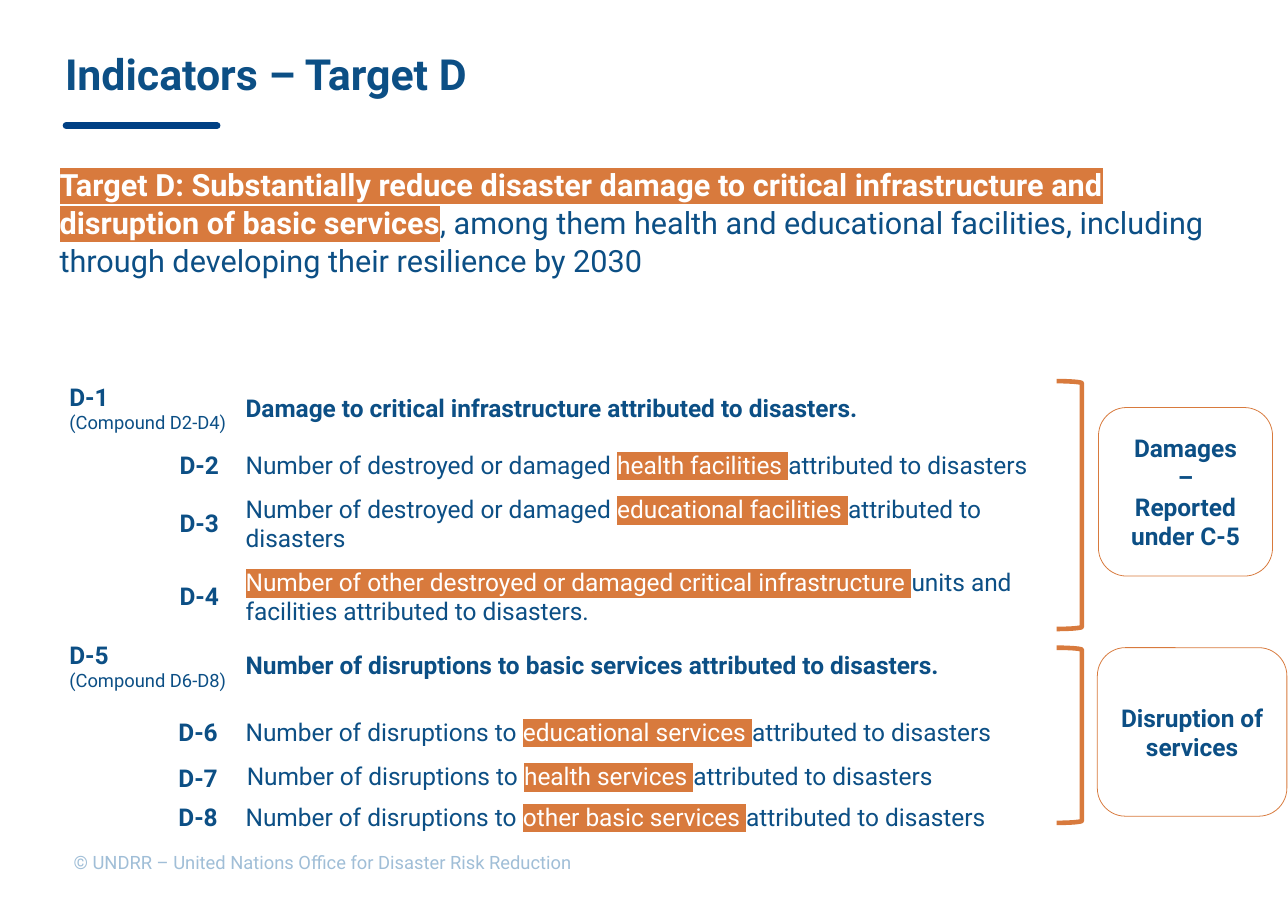
import pptx
import pptx.util
import pptx.dml.color
import pptx.enum.shapes
import pptx.enum.text
import pptx.oxml.ns
import lxml.etree

Inches = pptx.util.Inches
Pt = pptx.util.Pt
SHAPE = pptx.enum.shapes.MSO_SHAPE
ALIGN = pptx.enum.text.PP_ALIGN
MIDDLE = pptx.enum.text.MSO_ANCHOR.MIDDLE
TOP = pptx.enum.text.MSO_ANCHOR.TOP
qn = pptx.oxml.ns.qn

HUES = {"blue": "0C4F85", "rule": "004084", "mark": "D87A3D",
        "pale": "A0BED7", "white": "FFFFFF"}

ROWS = [
    (0.78, "D-1", "(Compound D2-D4)", 0,
     "Damage to critical infrastructure attributed to disasters."),
    (0.24, "D-2", "", 1,
     "Number of destroyed or damaged |health facilities |attributed to disasters"),
    (0.79, "D-3", "", 1,
     "Number of destroyed or damaged |educational facilities |attributed to disasters"),
    (0.35, "D-4", "", 1,
     "|Number of other destroyed or damaged critical infrastructure |"
     "units and facilities attributed to disasters."),
    (0.72, "D-5", "(Compound D6-D8)", 0,
     "Number of disruptions to basic services attributed to disasters."),
    (0.49, "D-6", "", 0.99,
     "Number of disruptions to |educational services |attributed to disasters"),
    (0.35, "D-7", "", 0.99,
     "Number of disruptions to |health services |attributed to disasters"),
    (0.35, "D-8", "", 0.99,
     "Number of disruptions to |other basic services |attributed to disasters"),
]


class Deck:
    """Holds the style and the current slide, and draws each kind of element."""

    def __init__(self, wide, high):
        self.file = pptx.Presentation()
        self.file.slide_width = Inches(wide)
        self.file.slide_height = Inches(high)
        self.slide = self.file.slides.add_slide(self.file.slide_layouts[5])
        self.shapes = self.slide.shapes

    def hue(self, name):
        return pptx.dml.color.RGBColor.from_string(HUES[name])

    def put(self, thing, **values):
        for name, value in values.items():
            setattr(thing, name, value)

    def run(self, para, text, size, color="blue", bold=False, mark=False):
        run = para.add_run()
        run.text = text
        self.put(run.font, name="Roboto", size=Pt(size), bold=bold)
        run.font.color.rgb = self.hue("white" if mark else color)
        if mark:
            glow = lxml.etree.Element(qn("a:highlight"))
            lxml.etree.SubElement(glow, qn("a:srgbClr"), val=HUES["mark"])
            run.font._element.find(qn("a:solidFill")).addnext(glow)

    def frame(self, frame, pads, anchor):
        names = ("margin_left", "margin_top", "margin_right", "margin_bottom")
        self.put(frame, word_wrap=True, vertical_anchor=anchor,
                 **{name: Inches(pad) for name, pad in zip(names, pads)})
        return frame.paragraphs[0]

    def title(self, text, *box):
        shape = self.shapes.title
        names = ("left", "top", "width", "height")
        self.put(shape, **{name: Inches(size) for name, size in zip(names, box)})
        para = self.frame(shape.text_frame, (0, 0.06, 0.11, 0.06), MIDDLE)
        para.alignment = ALIGN.LEFT
        self.run(para, text, 28, bold=True)

    def text(self, box, pads=(0.1, 0.05, 0.1, 0.05)):
        shape = self.shapes.add_textbox(*map(Inches, box))
        return self.frame(shape.text_frame, pads, TOP)

    def rule(self, left, right, top):
        kind = pptx.enum.shapes.MSO_CONNECTOR.STRAIGHT
        line = self.shapes.add_connector(
            kind, Inches(left), Inches(top), Inches(right), Inches(top))
        line.line.color.rgb = self.hue("rule")
        line.line.width = Pt(4.5)
        line.line._ln.set("cap", "rnd")
        lxml.etree.SubElement(line._element.spPr, qn("a:effectLst"))

    def shape(self, kind, box, width):
        shape = self.shapes.add_shape(kind, *map(Inches, box))
        shape.shadow.inherit = False
        shape.fill.background()
        shape.line.color.rgb = self.hue("mark")
        shape.line.width = Pt(width)
        return shape

    def label(self, lines, box):
        frame = self.shape(SHAPE.ROUNDED_RECTANGLE, box, 0.5).text_frame
        para = self.frame(frame, (0.1, 0.05, 0.1, 0.05), MIDDLE)
        for spot, line in enumerate(lines):
            para = frame.add_paragraph() if spot else para
            para.alignment = ALIGN.CENTER
            self.run(para, line, 16, bold=True)

    def cell(self, cell, indent=0):
        cell.fill.background()
        self.put(cell, vertical_anchor=MIDDLE, margin_left=Inches(0.07 + indent),
                 margin_right=Inches(0.07), margin_top=0, margin_bottom=0)
        return cell.text_frame.paragraphs[0]

    def table(self, rows, box, widths):
        table = self.shapes.add_table(
            len(rows), len(widths), *map(Inches, box)).table
        self.put(table, first_row=False, horz_banding=False)
        for column, width in zip(table.columns, widths):
            column.width = Inches(width)
        for row, (high, code, note, indent, text) in zip(table.rows, rows):
            row.height = Inches(high)
            left, right = row.cells
            self.run(self.cell(left, indent), code, 16, bold=True)
            if note:
                self.run(left.text_frame.add_paragraph(), note, 12)
            para = self.cell(right)
            for spot, part in enumerate(text.split("|")):
                if part:
                    self.run(para, part, 16, bold=bool(note), mark=spot == 1)
        return table


def main():
    deck = Deck(11.69, 8.27)
    deck.rule(0.6, 1.97, 1.14)
    foot = deck.text((0.57, 7.68, 10.3, 0.3))
    deck.run(foot, "© UNDRR – United Nations Office for Disaster Risk Reduction",
             12, "pale")
    deck.title("Indicators – Target D", 0.59, 0.2, 10.52, 0.94)

    goal = deck.text((0.54, 1.44, 10.62, 1.21), (0, 0.06, 0.11, 0.06))
    goal.line_spacing = 1.03
    deck.run(goal, "Target D: Substantially reduce disaster damage to critical "
             "infrastructure and disruption of basic services",
             20, bold=True, mark=True)
    deck.run(goal, ", among them health and educational facilities, including "
             "through developing their resilience by 2030", 20)

    table = deck.table(ROWS, (0.56, 3.32, 9.26, 4.07), (1.6, 7.66))
    deck.put(table.cell(6, 1), vertical_anchor=TOP,
             margin_left=Inches(0.08), margin_top=Inches(0.03))

    for top, high in ((3.46, 2.25), (5.88, 1.59)):
        deck.shape(SHAPE.RIGHT_BRACKET, (9.59, top, 0.23, high), 3)
    deck.label(("Damages", "–", "Reported under C-5"), (9.97, 3.7, 1.58, 1.53))
    deck.label(("Disruption of services",), (9.96, 5.88, 1.72, 1.53))
    deck.file.save("out.pptx")


if __name__ == "__main__":
    main()
